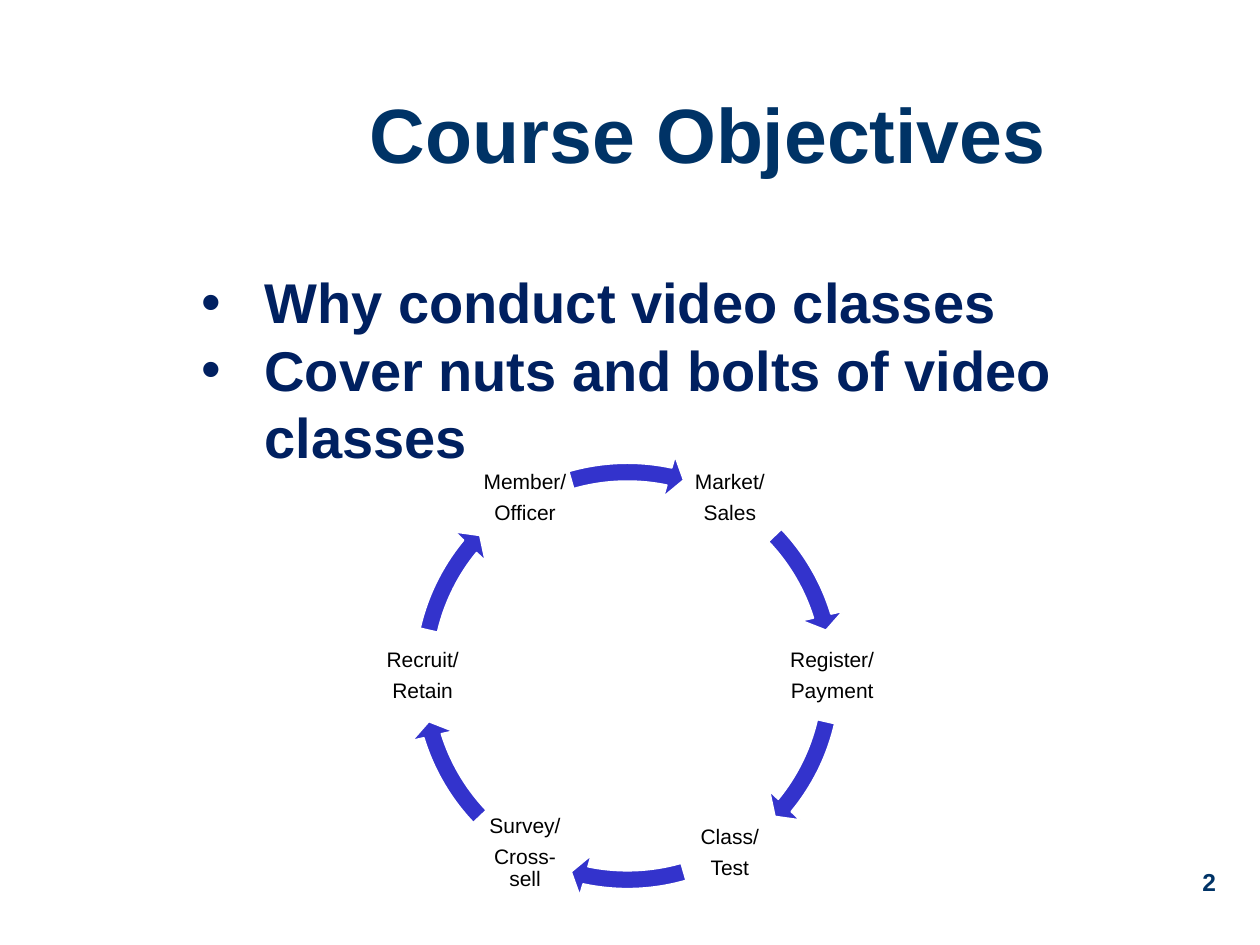
from dataclasses import dataclass
from math import cos, radians, sin

from lxml import etree
from pptx import Presentation
from pptx import util as u
from pptx.dml.color import RGBColor
from pptx.enum import shapes, text
from pptx.oxml.ns import qn

WIDTH, HEIGHT = 10, 7.5
COLORS = {"title": "003366", "body": "002060", "label": "000000",
          "arrow": "3333CC", "edge": "FFFFFF"}
CENTER = (0.498, 0.7153)
RADIUS, LABEL_SIZE, RING_SIZE = 0.1625, 0.073, 0.357


@dataclass
class Box:
    left: float
    top: float
    width: float
    height: float

    def emu(self) -> list[int]:
        return [u.Inches(v * size) for v, size in
                zip((self.left, self.top, self.width, self.height), (WIDTH, HEIGHT) * 2)]


@dataclass
class Style:
    size: float
    color: str
    bold: bool = True
    align: text.PP_ALIGN = text.PP_ALIGN.LEFT
    anchor: text.MSO_ANCHOR = text.MSO_ANCHOR.TOP
    margin: float | None = None
    bullet: bool = False
    line_spacing: float | None = None
    space_after: float | None = None


@dataclass
class Step:
    lines: list[str]
    angle: float
    start: float
    end: float


def rgb(name: str) -> RGBColor:
    return RGBColor.from_string(COLORS[name])


def centered(width: float, x: float = 0, y: float = 0) -> Box:
    height = width * WIDTH / HEIGHT
    return Box(CENTER[0] + x - width / 2,
               CENTER[1] + y * WIDTH / HEIGHT - height / 2, width, height)


def add_text(s, box: Box, lines: list[str], style: Style) -> None:
    tf = s.shapes.add_textbox(*box.emu()).text_frame
    tf.word_wrap = True
    tf.vertical_anchor = style.anchor
    if style.margin is not None:
        for side in ("left", "top", "right", "bottom"):
            setattr(tf, f"margin_{side}", u.Inches(style.margin))
    for i, line in enumerate(lines):
        p = tf.add_paragraph() if i else tf.paragraphs[0]
        p.alignment = style.align
        if style.line_spacing:
            p.line_spacing = style.line_spacing
        if style.space_after:
            p.space_after = u.Pt(style.space_after)
        if style.bullet:
            props = p._p.get_or_add_pPr()
            props.set("marL", str(u.Inches(0.5)))
            props.set("indent", str(-u.Inches(0.5)))
            etree.SubElement(props, qn("a:buFont")).set("typeface", "Arial")
            etree.SubElement(props, qn("a:buChar")).set("char", "•")
        r = p.add_run()
        r.text = line
        for name, value in {"name": "Arial", "size": u.Pt(style.size),
                            "bold": style.bold}.items():
            setattr(r.font, name, value)
        r.font.color.rgb = rgb(style.color)


def add_arrow(s, step: Step) -> None:
    sp = s.shapes.add_shape(shapes.MSO_SHAPE.CIRCULAR_ARROW, *centered(RING_SIZE).emu())
    degree = 0.6
    for i, value in enumerate((0.04, 4.17 * degree, step.end * degree,
                               step.start * degree, 0.047)):
        sp.adjustments[i] = value
    sp.shadow.inherit = False
    sp.fill.solid()
    sp.fill.fore_color.rgb = rgb("arrow")
    sp.line.color.rgb = rgb("edge")
    sp.line.width = u.Pt(1)


def add_cycle(s, steps: list[Step], style: Style) -> None:
    for step in steps:
        turn = radians(step.angle)
        box = centered(LABEL_SIZE, RADIUS * cos(turn), RADIUS * sin(turn))
        add_text(s, box, step.lines, style)
        add_arrow(s, step)


def main() -> None:
    prs = Presentation()
    prs.slide_width, prs.slide_height = u.Inches(WIDTH), u.Inches(HEIGHT)
    s = prs.slides.add_slide(prs.slide_layouts[6])
    center, middle = text.PP_ALIGN.CENTER, text.MSO_ANCHOR.MIDDLE

    add_text(s, Box(0.158, 0.033, 0.808, 0.215), ["Course Objectives"],
             Style(44, "title", align=center, anchor=middle))
    add_text(s, Box(0.742, 0.911, 0.233, 0.069), ["2"],
             Style(14, "title", align=text.PP_ALIGN.RIGHT))
    add_text(s, Box(0.15, 0.277, 0.842, 0.372),
             ["Why conduct video classes", "Cover nuts and bolts of video classes"],
             Style(32, "body", bullet=True))

    names = [["Market/", "Sales"], ["Register/", "Payment"], ["Class/", "Test"],
             ["Survey/", "Cross-sell"], ["Recruit/", "Retain"], ["Member/", "Officer"]]
    arcs = [(-43.62, -17.11), (12.94, 39.45), (73.98, 101.85)]
    steps = []
    for i, lines in enumerate(names):
        half_turn = 180 * (i // len(arcs))
        start, end = ((a + half_turn) % 360 for a in arcs[i % len(arcs)])
        steps.append(Step(lines, 60 * i - 60, start, end))
    add_cycle(s, steps, Style(12, "label", False, center, middle, 0.02,
                              line_spacing=0.9, space_after=4.8))
    prs.save("out.pptx")


if __name__ == "__main__":
    main()
